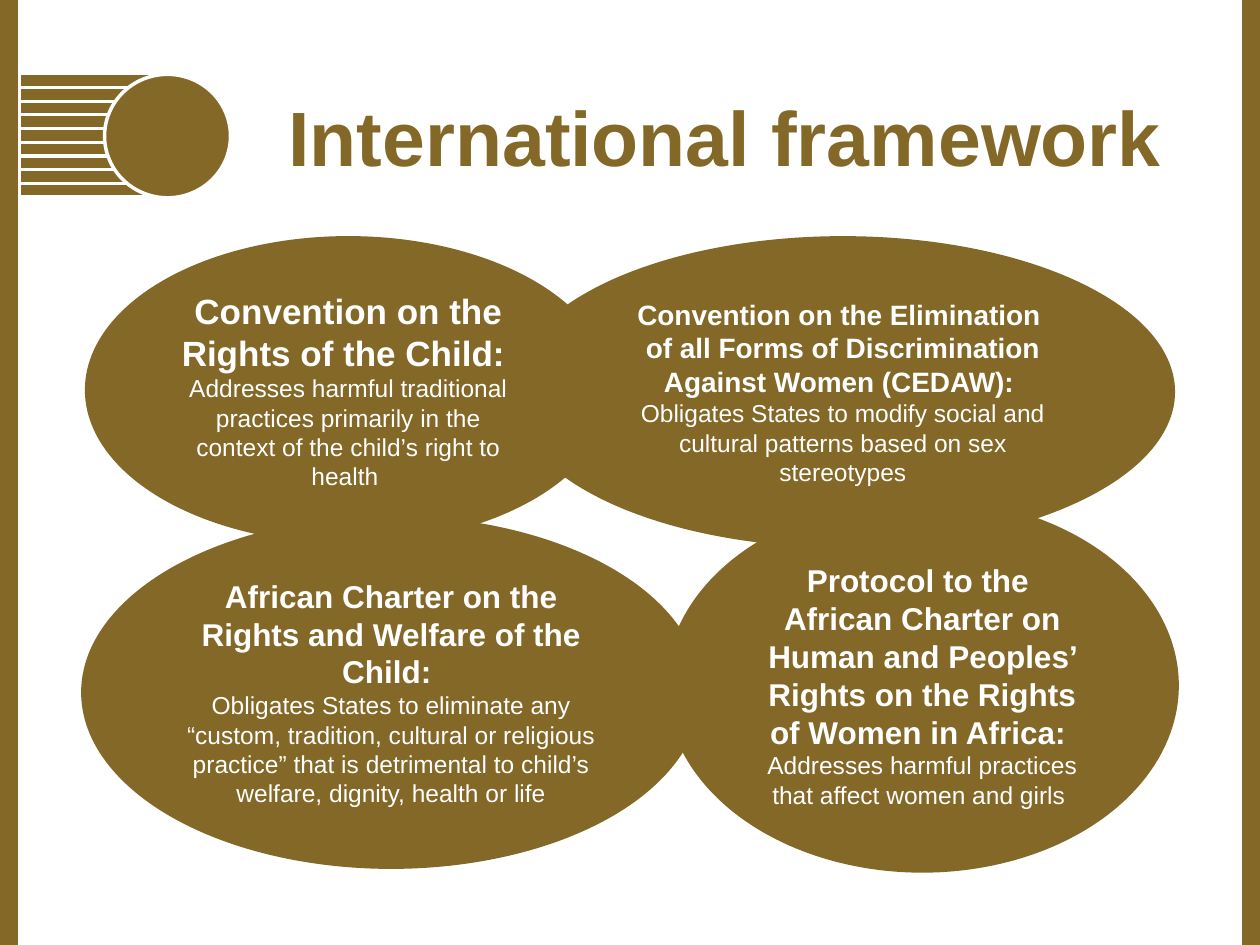
import pptx
import pptx.util
import pptx.dml.color
import pptx.enum.shapes
import pptx.enum.text
import pptx.oxml

Inches, Pt = pptx.util.Inches, pptx.util.Pt
ALIGN, ANCHOR = pptx.enum.text.PP_ALIGN, pptx.enum.text.MSO_ANCHOR

COLORS = {"bronze": "836827", "white": "FFFFFF"}
FONT = "Arial"
WIDTH, HEIGHT = 10, 7.5
BODY_SIZE = 14

TITLE = "International framework"
TITLE_BOX = (2.29, 0.71, 7.05, 0.74)

# box, heading size, heading (\v is a line break), explanation
INSTRUMENTS = [
    ((4.08, 1.9, 5.22, 2.42), 16,
     "Convention on the Elimination \vof all Forms of Discrimination Against Women (CEDAW): ",
     "Obligates States to modify social and cultural patterns based on sex stereotypes"),
    ((0.67, 4.12, 4.87, 2.75), 18,
     "African Charter on the Rights and Welfare of the Child: ",
     "Obligates States to eliminate any “custom, tradition, cultural or religious practice” "
     "that is detrimental to child’s welfare, dignity, health or life"),
    ((5.31, 3.98, 4.02, 2.92), 18,
     "Protocol to the \vAfrican Charter on Human and Peoples’ Rights on the Rights of Women in Africa: ",
     "Addresses harmful practices that affect women and girls "),
    ((0.7, 1.9, 4.13, 2.39), 20,
     "Convention on the Rights of the Child: ",
     "Addresses harmful traditional practices primarily in the context of the child’s right to health "),
]

EDGE = 0.07
STRIPE_COUNT, STRIPE_TOP, STRIPE_BOTTOM = 9, 0.64, 1.51
STRIPE_LEFT, STRIPE_RIGHT = 0.17, 1.29
DISC_BOX = (0.83, 0.59, 1, 0.98)


def rgb(name):
    return pptx.dml.color.RGBColor.from_string(COLORS[name])


def add_line(s, x1, y1, x2, y2, width):
    kind = pptx.enum.shapes.MSO_CONNECTOR.STRAIGHT
    sp = s.shapes.add_connector(kind, *map(Inches, (x1, y1, x2, y2)))
    sp.line.color.rgb = rgb("bronze")
    sp.line.width = Pt(width)
    sp._element.spPr.append(pptx.oxml.parse_xml(
        '<a:effectLst xmlns:a="http://schemas.openxmlformats.org/drawingml/2006/main"/>'))


def add_ellipse(s, box, line_color, line_width):
    sp = s.shapes.add_shape(pptx.enum.shapes.MSO_SHAPE.OVAL, *map(Inches, box))
    sp.shadow.inherit = False
    sp.fill.solid()
    sp.fill.fore_color.rgb = rgb("bronze")
    sp.line.color.rgb = rgb(line_color)
    sp.line.width = Pt(line_width)
    return sp


def write(p, text, align, color, size, bold):
    p.text = text
    p.alignment = align
    for r in p.runs:
        for name, value in {"name": FONT, "size": Pt(size), "bold": bold}.items():
            setattr(r.font, name, value)
        r.font.color.rgb = rgb(color)


def add_frame(s):
    for x in (EDGE, WIDTH - EDGE):
        add_line(s, x, 0, x, HEIGHT, 10)
    step = (STRIPE_BOTTOM - STRIPE_TOP) / (STRIPE_COUNT - 1)
    for i in range(STRIPE_COUNT):
        y = STRIPE_TOP + i * step
        add_line(s, STRIPE_LEFT, y, STRIPE_RIGHT, y, 6)
    add_ellipse(s, DISC_BOX, "white", 2)


def add_title(s):
    sp = s.shapes.title
    for name, value in zip(("left", "top", "width", "height"), TITLE_BOX):
        setattr(sp, name, Inches(value))
    tf = sp.text_frame
    frame_format = {
        "margin_left": 0, "margin_top": 0, "margin_right": 0, "margin_bottom": 0,
        "vertical_anchor": ANCHOR.MIDDLE, "word_wrap": True,
        "auto_size": pptx.enum.text.MSO_AUTO_SIZE.SHAPE_TO_FIT_TEXT,
    }
    for name, value in frame_format.items():
        setattr(tf, name, value)
    write(tf.paragraphs[0], TITLE, ALIGN.LEFT, "bronze", 44, True)


def add_instrument(s, box, size, heading, explanation):
    tf = add_ellipse(s, box, "bronze", 3.75).text_frame
    tf.word_wrap = True
    tf.vertical_anchor = ANCHOR.MIDDLE
    write(tf.paragraphs[0], heading, ALIGN.CENTER, "white", size, True)
    write(tf.add_paragraph(), explanation, ALIGN.CENTER, "white", BODY_SIZE, False)


def main():
    prs = pptx.Presentation()
    prs.slide_width, prs.slide_height = Inches(WIDTH), Inches(HEIGHT)
    s = prs.slides.add_slide(prs.slide_layouts.get_by_name("Title Only"))
    s.background.fill.solid()
    s.background.fill.fore_color.rgb = rgb("white")
    add_frame(s)
    add_title(s)
    for instrument in INSTRUMENTS:
        add_instrument(s, *instrument)
    prs.save("out.pptx")


if __name__ == "__main__":
    main()
